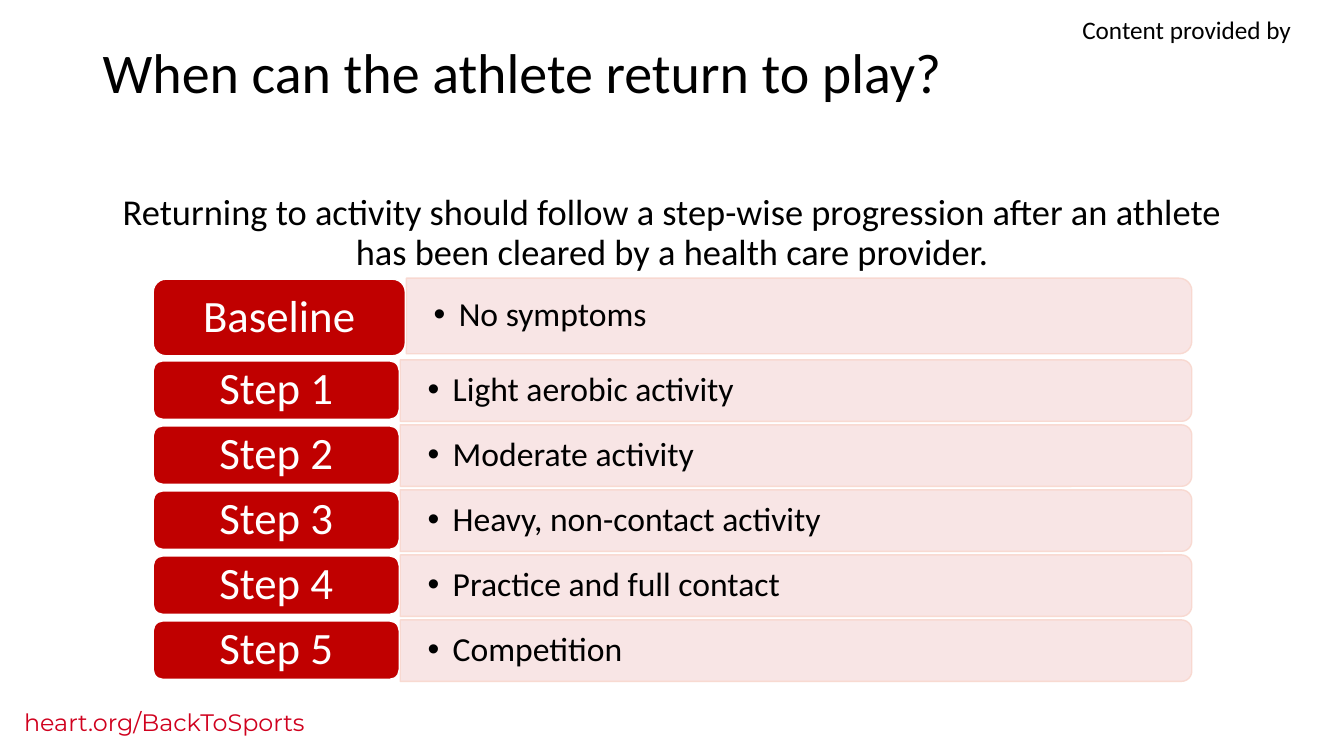
from lxml.etree import SubElement
from pptx import Presentation
from pptx.dml.color import RGBColor
from pptx.enum.shapes import MSO_SHAPE
from pptx.enum.text import MSO_ANCHOR, PP_ALIGN
from pptx.oxml.ns import qn
from pptx.util import Inches, Pt

RED, BLACK, WHITE = "C00000", "000000", "FFFFFF"
LINK_RED, BAR_EDGE = "D0011E", "F8D7CE"
STEPS = [
    "Light aerobic activity",
    "Moderate activity",
    "Heavy, non-contact activity",
    "Practice and full contact",
    "Competition",
]


def rgb(hex_color):
    return RGBColor.from_string(hex_color)


def write(shape, text, size, color=BLACK, align=PP_ALIGN.LEFT, font="Calibri",
          spacing=0.9, anchor=MSO_ANCHOR.TOP, insets=(0.1, 0.05), bullet=False):
    """Put one styled paragraph into a shape; insets are (sides, top and bottom)."""
    frame = shape.text_frame
    frame.word_wrap = True
    frame.vertical_anchor = anchor
    frame.margin_left = frame.margin_right = Inches(insets[0])
    frame.margin_top = frame.margin_bottom = Inches(insets[1])
    paragraph = frame.paragraphs[0]
    paragraph.text = text
    paragraph.alignment = align
    paragraph.line_spacing = spacing
    if bullet:
        properties = paragraph._p.get_or_add_pPr()
        properties.set("marL", str(Inches(0.25)))
        properties.set("indent", str(Inches(-0.25)))
        SubElement(properties, qn("a:buFont")).set("typeface", "Arial")
        SubElement(properties, qn("a:buChar")).set("char", "•")
    paragraph.font.size = Pt(size)
    paragraph.font.name = font
    paragraph.font.color.rgb = rgb(color)


def add_text(slide, left, top, width, height, text, size, **style):
    box = slide.shapes.add_textbox(
        Inches(left), Inches(top), Inches(width), Inches(height))
    write(box, text, size, **style)


def add_block(slide, preset, left, top, width, height, line_color):
    block = slide.shapes.add_shape(
        preset, Inches(left), Inches(top), Inches(width), Inches(height))
    block.shadow.inherit = False
    block.fill.solid()
    block.fill.fore_color.rgb = rgb(RED)
    block.line.color.rgb = rgb(line_color)
    block.line.width = Pt(1)
    return block


def add_bar(slide, left, top, width, height):
    """Pale bar rounded on its right side: a round-topped shape turned by 90 degrees."""
    bar = add_block(slide, MSO_SHAPE.ROUND_2_SAME_RECTANGLE,
                    left + (width - height) / 2, top + (height - width) / 2,
                    height, width, BAR_EDGE)
    bar.rotation = 90
    fill_color, line_color = bar._element.spPr.iter(qn("a:srgbClr"))
    SubElement(fill_color, qn("a:alpha")).set("val", "10000")
    SubElement(line_color, qn("a:alpha")).set("val", "90000")


def add_row(slide, left, top, width, height, label_width, label_height, label, activity):
    bar_left = left + label_width + 0.01
    bar_width = left + width - bar_left
    add_bar(slide, bar_left, top, bar_width, height)
    add_text(slide, bar_left, top, bar_width, height, activity, 24,
             anchor=MSO_ANCHOR.MIDDLE, insets=(0.27, 0.14), bullet=True)
    tag = add_block(slide, MSO_SHAPE.ROUNDED_RECTANGLE,
                    left, top + 0.01, label_width, label_height, WHITE)
    write(tag, label, 32, color=WHITE, align=PP_ALIGN.CENTER,
          anchor=MSO_ANCHOR.MIDDLE, insets=(0.13, 0.07))


def add_progression(slide, left, top, width, height):
    add_row(slide, left, top, width, 0.75, 2.5, 0.76, "Baseline", "No symptoms")
    bar_height, first_step = 0.61, 0.81
    pitch = (height - first_step - bar_height) / (len(STEPS) - 1)
    for index, activity in enumerate(STEPS):
        add_row(slide, left, top + first_step + index * pitch, width, bar_height,
                2.44, 0.58, f"Step {index + 1}", activity)


def add_frame_texts(slide):
    """Web address at the foot and credit line at the head."""
    add_text(slide, 0.14, 6.97, 4.33, 0.39, "heart.org/BackToSports", 17,
             color=LINK_RED, font="Montserrat", spacing=1.0)
    add_text(slide, 10.38, 0.09, 2.78, 0.4, "Content provided by", 18,
             align=PP_ALIGN.CENTER, spacing=1.0)


def add_heading(slide):
    add_text(slide, 0.92, 0.4, 9.46, 0.83, "When can the athlete return to play?", 40)


def add_introduction(slide):
    add_text(slide, 0.92, 1.88, 11.5, 0.89,
             "Returning to activity should follow a step-wise progression after an "
             "athlete has been cleared by a health care provider.",
             26, align=PP_ALIGN.CENTER)


def main():
    presentation = Presentation()
    presentation.slide_width = Inches(13.33)
    presentation.slide_height = Inches(7.5)
    slide = presentation.slides.add_slide(presentation.slide_layouts[6])
    add_frame_texts(slide)
    add_heading(slide)
    add_progression(slide, 1.52, 2.76, 10.3, 4.0)
    add_introduction(slide)
    presentation.save("out.pptx")


if __name__ == "__main__":
    main()
